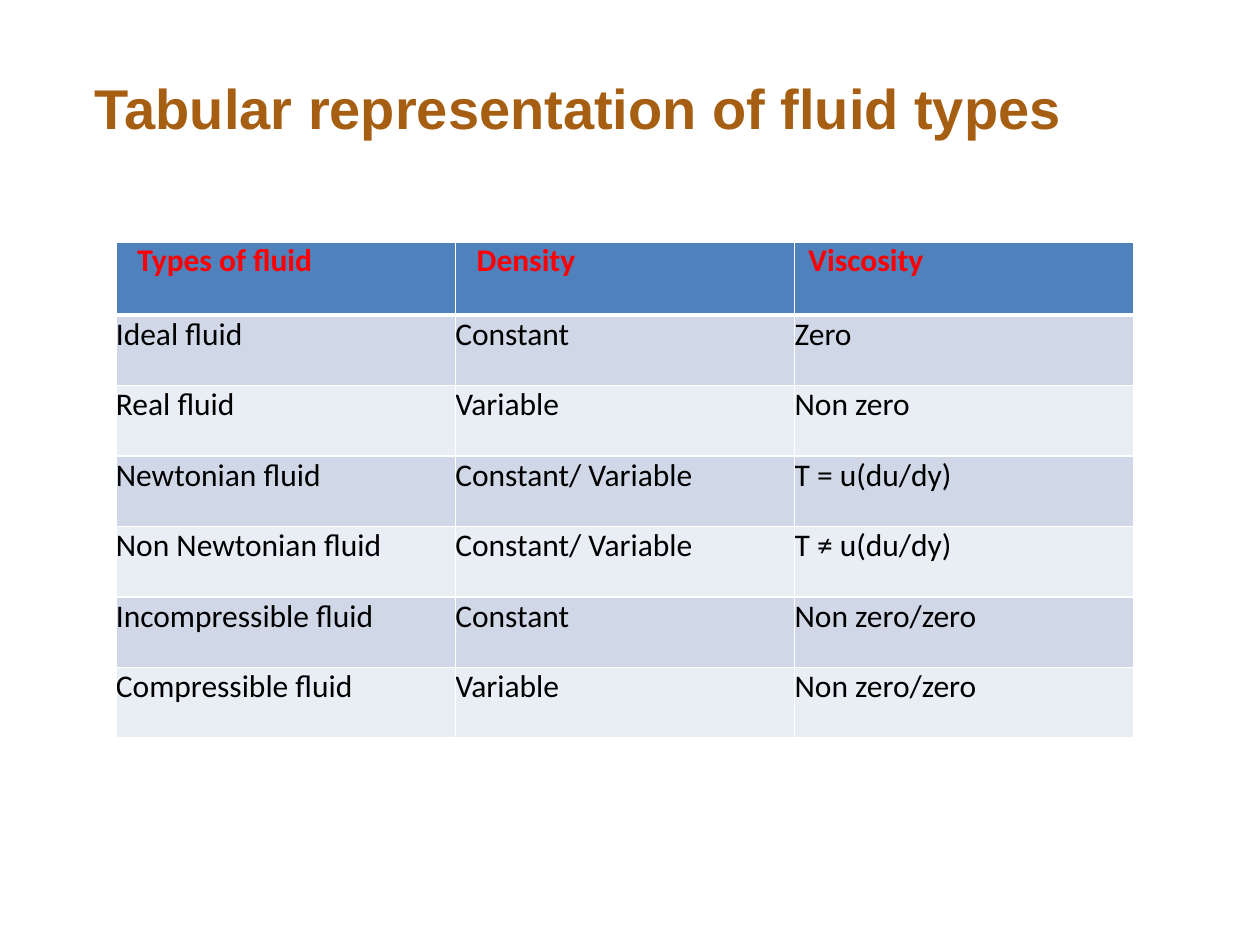
from dataclasses import dataclass

from lxml import etree
from pptx import Presentation
from pptx import util as u
from pptx.dml.color import RGBColor
from pptx.enum import text
from pptx.oxml.ns import qn

TITLE = "Tabular representation of fluid types"
HEADERS = ["Types of fluid", "Density", "Viscosity"]
HEADER_INDENTS = [0.17, 0.17, 0.11]
FLUIDS = [
    ("Ideal fluid", "Constant", "Zero"),
    ("Real fluid", "Variable", "Non zero"),
    ("Newtonian fluid", "Constant/ Variable", "T = u(du/dy)"),
    ("Non Newtonian fluid", "Constant/ Variable", "T ≠ u(du/dy)"),
    ("Incompressible fluid", "Constant", "Non zero/zero"),
    ("Compressible fluid", "Variable", "Non zero/zero"),
]


@dataclass(frozen=True)
class Theme:
    title_font: str = "Arial"
    table_font: str = "Calibri"
    title_size: int = 32
    table_size: int = 18
    title: str = "A65F12"
    header_text: str = "FF0000"
    body_text: str = "000000"
    header_fill: str = "4F81BD"
    bands: tuple = ("D0D8E8", "E9EDF4")
    border: str = "FFFFFF"


THEME = Theme()
TITLE_AREA = (0.75, 0.58, 8.25, 1.08)
TABLE_LEFT, TABLE_TOP, TABLE_WIDTH = 0.92, 1.92, 8.08
HEADER_HEIGHT, ROW_HEIGHT = 0.58, 0.56


def set_font(para, name, size, color, bold):
    font = para.font
    font.name, font.size, font.bold = name, u.Pt(size), bold
    font.color.rgb = RGBColor.from_string(color)


def add_borders(cell, widths):
    """Draw solid borders; widths maps a side (L, R, T, B) to points."""
    props = cell._tc.get_or_add_tcPr()
    for side, width in widths.items():
        line = etree.SubElement(props, qn(f"a:ln{side}"), w=str(u.Pt(width)))
        fill = etree.SubElement(line, qn("a:solidFill"))
        etree.SubElement(fill, qn("a:srgbClr"), val=THEME.border)


def fill_cell(cell, words, row, indent):
    is_header = row == 0
    cell.text = words
    cell.margin_left = u.Inches(indent)
    cell.margin_right = cell.margin_top = cell.margin_bottom = 0
    set_font(cell.text_frame.paragraphs[0], THEME.table_font, THEME.table_size,
             THEME.header_text if is_header else THEME.body_text, is_header)
    add_borders(cell, {"L": 1, "R": 1, "T": 3 if row == 1 else 1,
                       "B": 3 if is_header else 1})
    cell.fill.solid()
    color = THEME.header_fill if is_header else THEME.bands[(row - 1) % 2]
    cell.fill.fore_color.rgb = RGBColor.from_string(color)


def add_title(page):
    title = page.shapes.title
    title.left, title.top, title.width, title.height = map(u.Inches, TITLE_AREA)
    frame = title.text_frame
    frame.text = TITLE
    frame.word_wrap = True
    frame.auto_size = text.MSO_AUTO_SIZE.NONE
    frame.vertical_anchor = text.MSO_ANCHOR.TOP
    frame.margin_left = frame.margin_right = frame.margin_top = frame.margin_bottom = 0
    para = frame.paragraphs[0]
    para.alignment = text.PP_ALIGN.LEFT
    set_font(para, THEME.title_font, THEME.title_size, THEME.title, True)


def add_fluid_table(page):
    rows = [HEADERS, *FLUIDS]
    height = HEADER_HEIGHT + ROW_HEIGHT * len(FLUIDS)
    area = map(u.Inches, (TABLE_LEFT, TABLE_TOP, TABLE_WIDTH, height))
    table = page.shapes.add_table(len(rows), len(HEADERS), *area).table
    for row, values in enumerate(rows):
        table.rows[row].height = u.Inches(ROW_HEIGHT if row else HEADER_HEIGHT)
        for column, words in enumerate(values):
            indent = 0 if row else HEADER_INDENTS[column]
            fill_cell(table.cell(row, column), words, row, indent)


def main():
    deck = Presentation()
    deck.slide_width, deck.slide_height = u.Inches(10), u.Inches(7.5)
    page = deck.slides.add_slide(deck.slide_layouts.get_by_name("Title Only"))
    add_title(page)
    add_fluid_table(page)
    deck.save("out.pptx")


if __name__ == "__main__":
    main()
